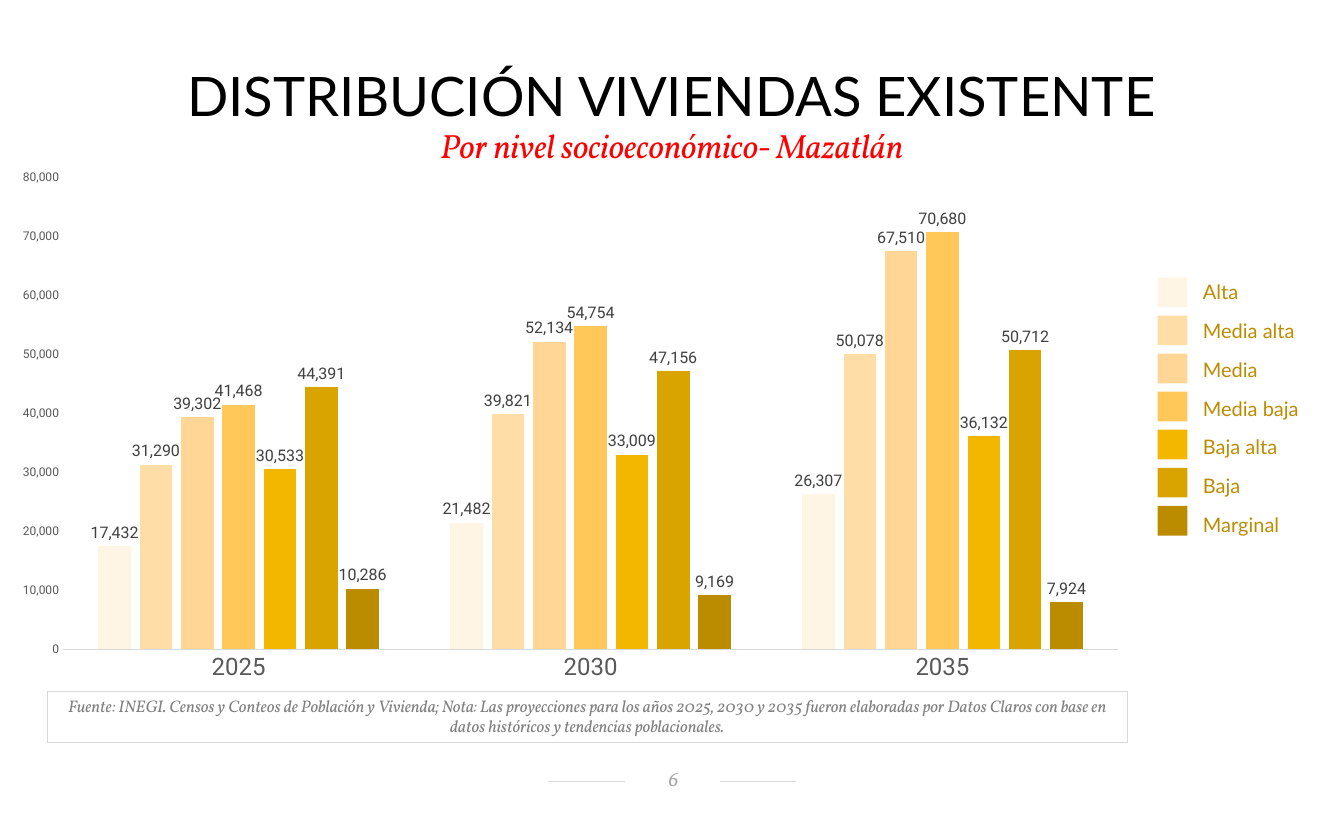
from lxml import etree
from pptx import Presentation
from pptx.chart.data import CategoryChartData
from pptx.dml.color import RGBColor
from pptx.enum.chart import XL_CHART_TYPE as ChartType, XL_LABEL_POSITION as LabelPos
from pptx.enum.chart import XL_TICK_MARK as TickMark
from pptx.enum.shapes import MSO_CONNECTOR as Connector, MSO_SHAPE as Shape
from pptx.enum.text import MSO_ANCHOR as Anchor, PP_ALIGN as Align
from pptx.oxml import parse_xml
from pptx.oxml.ns import nsdecls, qn
from pptx.util import Pt

COLORS = {
    "title": "000000", "subtitle": "FF0000", "source": "808080", "page": "A6A6A6",
    "rule": "D9D9D9", "paper": "FFFFFF", "legend": "BC8C00",
    "axis": "595959", "label": "404040",
}
YEARS = ["2025", "2030", "2035"]
LEVELS = [
    ("Alta", "FFF5E5", (17432, 21482, 26307)),
    ("Media alta", "FFDDA7", (31290, 39821, 50078)),
    ("Media", "FFD695", (39302, 52134, 67510)),
    ("Media baja", "FFC859", (41468, 54754, 70680)),
    ("Baja alta", "F3B700", (30533, 33009, 36132)),
    ("Baja", "DAA400", (44391, 47156, 50712)),
    ("Marginal", "BC8C00", (10286, 9169, 7924)),
]
SOURCE = ("Fuente: INEGI. Censos y Conteos de Población y Vivienda; Nota: Las proyecciones "
          "para los años 2025, 2030 y 2035 fueron elaboradas por Datos Claros con base en "
          "datos históricos y tendencias poblacionales.")


def rgb(value):
    return RGBColor.from_string(value)


def style_font(font, name, size, color, italic=False):
    font.name = name
    font.size = Pt(size)
    font.italic = italic
    font.bold = False
    font.color.rgb = rgb(color)


def write(frame, text, font, size, color, italic=False, align=Align.CENTER):
    frame.word_wrap = True
    para = frame.paragraphs[0]
    para.alignment = align
    span = para.add_run()
    span.text = text
    style_font(span.font, font, size, color, italic)
    return para


def set_margins(target, left, top, right, bottom):
    target.margin_left, target.margin_top = Pt(left), Pt(top)
    target.margin_right, target.margin_bottom = Pt(right), Pt(bottom)


def add_text(page, left, top, width, height):
    return page.shapes.add_textbox(Pt(left), Pt(top), Pt(width), Pt(height)).text_frame


def add_box(page, left, top, width, height, fill=None, line=None):
    box = page.shapes.add_shape(Shape.RECTANGLE, Pt(left), Pt(top), Pt(width), Pt(height))
    box.shadow.inherit = False
    if fill:
        box.fill.solid()
        box.fill.fore_color.rgb = rgb(fill)
    else:
        box.fill.background()
    if line:
        box.line.color.rgb = rgb(line)
        box.line.width = Pt(0.75)
    else:
        box.line.fill.background()
    return box


def add_page_number(page):
    """The white box interrupts the rule around the number."""
    rule = page.shapes.add_connector(Connector.STRAIGHT, Pt(411), Pt(586), Pt(597), Pt(586))
    rule.line.color.rgb = rgb(COLORS["rule"])
    rule.line.width = Pt(0.75)
    etree.SubElement(rule._element.spPr, qn("a:effectLst"))
    frame = add_box(page, 468.7, 574.6, 71.3, 20.9, fill=COLORS["paper"]).text_frame
    set_margins(frame, 8, 1.5, 6.5, 3.6)
    frame.vertical_anchor = Anchor.MIDDLE
    write(frame, "6", "Vollkorn", 15.4, COLORS["page"], italic=True)


def add_legend(page):
    row_height, pitch = 29.1, 28.55
    table = page.shapes.add_table(len(LEVELS), 1, Pt(902.2), Pt(204.5), Pt(100.8),
                                  Pt(row_height * len(LEVELS))).table
    table.first_row = False
    table.horz_banding = False
    for index, (name, color, _) in enumerate(LEVELS):
        table.rows[index].height = Pt(row_height)
        cell = table.cell(index, 0)
        cell.fill.background()
        set_margins(cell, 0, 0, 0, 0)
        cell.vertical_anchor = Anchor.MIDDLE
        write(cell.text_frame, name, "Lato", 15, COLORS["legend"], align=Align.LEFT)
        for edge in ("lnL", "lnR", "lnT", "lnB"):
            border = parse_xml(f'<a:{edge} {nsdecls("a")} w="0"><a:noFill/></a:{edge}>')
            fill = cell._tc.tcPr.find(qn("a:noFill"))
            fill.addprevious(border)
        add_box(page, 868.3, 208.1 + index * pitch, 22.3, 22.3, fill=color)


def place_plot(chart, left, top, width, height):
    """Fix the inner plot area, as fractions of the chart."""
    area = chart._chartSpace.chart.plotArea
    for old in area.findall(qn("c:layout")):
        area.remove(old)
    places = "".join(f'<c:{tag} val="{value}"/>' for tag, value in
                     zip("xywh", (left, top, width, height)))
    area.insert(0, parse_xml(
        f'<c:layout {nsdecls("c")}><c:manualLayout><c:layoutTarget val="inner"/>'
        f'<c:xMode val="edge"/><c:yMode val="edge"/>{places}</c:manualLayout></c:layout>'))


def style_axis(axis, size):
    axis.has_major_gridlines = False
    axis.major_tick_mark = axis.minor_tick_mark = TickMark.NONE
    style_font(axis.tick_labels.font, "Roboto", size, COLORS["axis"])


def add_housing_chart(page):
    data = CategoryChartData(number_format="#,##0")
    data.categories = YEARS
    for name, _, values in LEVELS:
        data.add_series(name, values)
    chart = page.shapes.add_chart(ChartType.COLUMN_CLUSTERED, Pt(0), Pt(119.5),
                                  Pt(856), Pt(399), data).chart
    chart.has_legend = False
    chart.has_title = False
    style_font(chart.font, "Roboto", 9, COLORS["title"])
    style_axis(chart.category_axis, 18)
    chart.category_axis.format.line.color.rgb = rgb(COLORS["rule"])
    chart.category_axis.format.line.width = Pt(0.75)
    values_axis = chart.value_axis
    style_axis(values_axis, 9)
    values_axis.format.line.fill.background()
    values_axis.minimum_scale, values_axis.maximum_scale = 0, 80000
    values_axis.major_unit = 10000
    values_axis.tick_labels.number_format = "#,##0"
    values_axis.tick_labels.number_format_is_linked = False

    plot = chart.plots[0]
    plot.vary_by_categories = False
    plot.gap_width, plot.overlap = 219, -27
    for series, (_, color, _) in zip(plot.series, LEVELS):
        series.format.fill.solid()
        series.format.fill.fore_color.rgb = rgb(color)
        series.invert_if_negative = False
        labels = series.data_labels
        labels.show_value = True
        labels.number_format = "#,##0"
        labels.number_format_is_linked = False
        labels.position = LabelPos.OUTSIDE_END
        style_font(labels.font, "Roboto", 12, COLORS["label"])
    place_plot(chart, 0.055, 0.034, 0.925, 0.887)


def main():
    deck = Presentation()
    deck.slide_width, deck.slide_height = Pt(1008), Pt(612)
    page = deck.slides.add_slide(deck.slide_layouts[6])

    add_page_number(page)
    source = add_box(page, 35.3, 518.4, 810, 38.2, line=COLORS["rule"]).text_frame
    source.vertical_anchor = Anchor.TOP
    write(source, SOURCE, "Vollkorn", 12.6, COLORS["source"], italic=True)
    subtitle = add_text(page, -25.2, 90, 1058.4, 38.2)
    para = write(subtitle, "Por nivel socioeconómico- Mazatlán", "Vollkorn", 25.2,
                 COLORS["subtitle"], italic=True)
    para.space_after = Pt(4.2)
    add_legend(page)
    add_housing_chart(page)
    title = add_text(page, 35.3, 55.4, 936.7, 43.2)
    set_margins(title, 8.6, 4.3, 8.6, 4.3)
    para = write(title, "DISTRIBUCIÓN VIVIENDAS EXISTENTE", "Lato", 40.8, COLORS["title"])
    para.line_spacing = 0.7
    deck.save("out.pptx")


if __name__ == "__main__":
    main()
